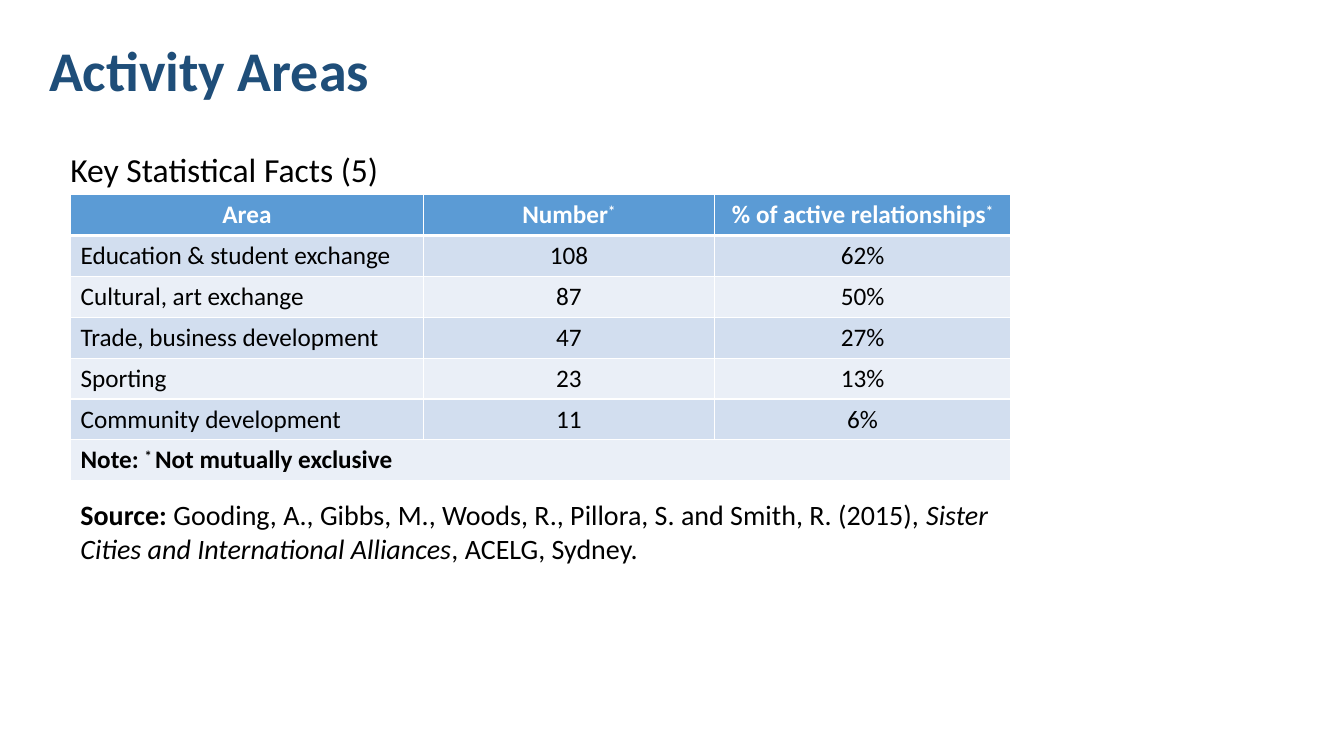
from lxml.etree import SubElement
from pptx import Presentation
from pptx.dml.color import RGBColor
from pptx.enum.text import MSO_ANCHOR, MSO_AUTO_SIZE, PP_ALIGN
from pptx.oxml.ns import qn
from pptx.util import Pt

COLORS = {
    "title": "1F4E79",
    "text": "000000",
    "white": "FFFFFF",
    "header": "5B9BD5",
    "dark_band": "D2DEEF",
    "light_band": "EAEFF7",
}
BOLD = {"bold": True}
ITALIC = {"italic": True}
SUPERSCRIPT = "30000"


class SlideBuilder:
    font_name = "Calibri"

    def __init__(self, slide):
        self.slide = slide

    def add_pieces(self, paragraph, pieces, size, color="text", **common):
        """Each piece is (text, font values, optional baseline)."""
        for text, values, *baseline in pieces:
            run = paragraph.add_run()
            run.text = text
            font_values = {"name": self.font_name, "size": Pt(size),
                           "bold": False, **common, **values}
            for attribute, value in font_values.items():
                setattr(run.font, attribute, value)
            run.font.color.rgb = RGBColor.from_string(COLORS[color])
            if baseline:
                run._r.get_or_add_rPr().set("baseline", baseline[0])

    def text(self, left, top, width, height, pieces, size, color="text"):
        box = self.slide.shapes.add_textbox(Pt(left), Pt(top), Pt(width), Pt(height))
        frame_values = {"word_wrap": True, "auto_size": MSO_AUTO_SIZE.SHAPE_TO_FIT_TEXT}
        for attribute, value in frame_values.items():
            setattr(box.text_frame, attribute, value)
        self.add_pieces(box.text_frame.paragraphs[0], pieces, size, color)

    def borders(self, cell, top=1, bottom=1):
        properties = cell._tc.get_or_add_tcPr()
        for side, width in {"L": 1, "R": 1, "T": top, "B": bottom}.items():
            line = SubElement(properties, qn(f"a:ln{side}"), w=str(Pt(width)))
            fill = SubElement(line, qn("a:solidFill"))
            SubElement(fill, qn("a:srgbClr"), val=COLORS["white"])

    def table(self, left, top, widths, row_height, rows, size):
        """First row is the header; a row with one entry spans all columns."""
        table = self.slide.shapes.add_table(
            len(rows), len(widths), Pt(left), Pt(top),
            Pt(sum(widths)), Pt(row_height * len(rows))).table
        for column, width in zip(table.columns, widths):
            column.width = Pt(width)
        for r, row in enumerate(rows):
            is_header = r == 0
            band = "header" if is_header else "dark_band" if r % 2 else "light_band"
            table.rows[r].height = Pt(row_height)
            for c in range(len(widths)):
                cell = table.cell(r, c)
                self.borders(cell, top=3 if r == 1 else 1, bottom=3 if is_header else 1)
                cell.fill.solid()
                cell.fill.fore_color.rgb = RGBColor.from_string(COLORS[band])
            if len(row) == 1:
                table.cell(r, 0).merge(table.cell(r, len(widths) - 1))
            for c, pieces in enumerate(row):
                cell = table.cell(r, c)
                cell.vertical_anchor = MSO_ANCHOR.MIDDLE if is_header else MSO_ANCHOR.TOP
                paragraph = cell.text_frame.paragraphs[0]
                centered = is_header or c > 0
                paragraph.alignment = PP_ALIGN.CENTER if centered else PP_ALIGN.LEFT
                self.add_pieces(paragraph, pieces, size,
                                "white" if is_header else "text", bold=is_header)


def main():
    presentation = Presentation()
    presentation.slide_width, presentation.slide_height = Pt(960), Pt(540)
    builder = SlideBuilder(presentation.slides.add_slide(presentation.slide_layouts[6]))

    # Activity table
    asterisk = ("*", {}, SUPERSCRIPT)
    header = [
        [("Area", {})],
        [("Number", {}), asterisk],
        [("% of active relationships", {}), asterisk],
    ]
    activities = [
        ("Education & student exchange", "108", "62%"),
        ("Cultural, art exchange", "87", "50%"),
        ("Trade, business development", "47", "27%"),
        ("Sporting", "23", "13%"),
        ("Community development", "11", "6%"),
    ]
    note = [[("Note: ", BOLD), ("* ", BOLD, SUPERSCRIPT), ("Not mutually exclusive", BOLD)]]
    body = [[[(entry, {})] for entry in activity] for activity in activities]
    builder.table(50.4, 139, [252, 208, 211.5], 29.2, [header, *body, note], 18)

    # Source citation
    citation = [
        ("Source:", BOLD),
        (" Gooding, A., Gibbs, M., Woods, R., Pillora, S. and Smith, R. (2015), ", {}),
        ("Sister Cities and International Alliances", ITALIC),
        (", ACELG, Sydney.", {}),
    ]
    builder.text(50.4, 352, 664, 55.5, citation, 20)

    # Title and subtitle
    builder.text(28, 21.6, 299, 55.5, [("Activity Areas", BOLD)], 40, "title")
    builder.text(43.2, 103, 246, 36, [("Key Statistical Facts (5)", {})], 24)

    presentation.save("out.pptx")


if __name__ == "__main__":
    main()
